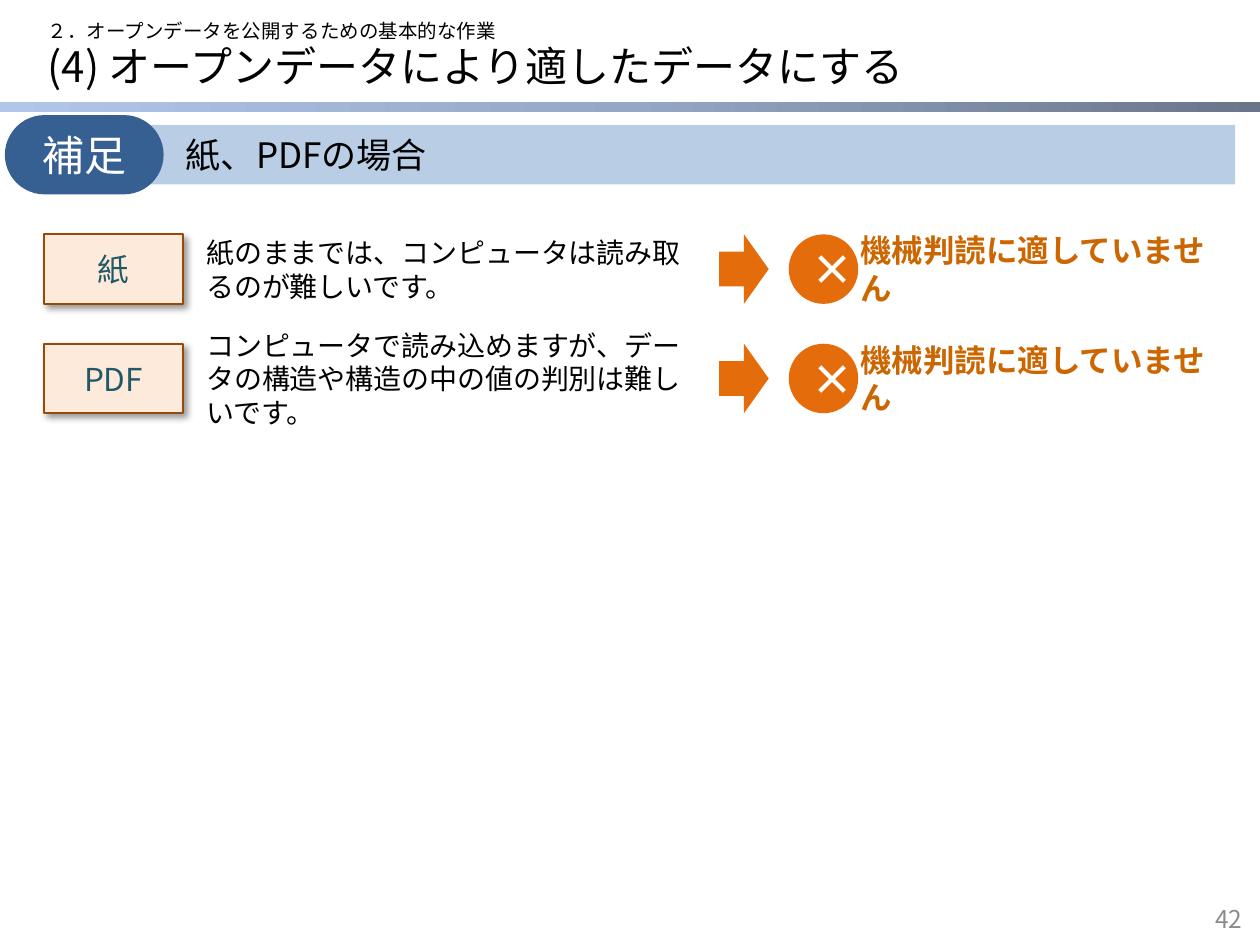
from dataclasses import dataclass

from lxml import etree
from pptx import Presentation
from pptx import util as u
from pptx.dml.color import RGBColor
from pptx.enum import shapes, text
from pptx.oxml import parse_xml
from pptx.oxml.ns import nsdecls, qn

SHAPE = shapes.MSO_SHAPE
ALIGN = text.PP_ALIGN


@dataclass(frozen=True)
class Theme:
    font: str = "Noto Sans CJK JP"
    black: str = "000000"
    white: str = "FFFFFF"
    grey: str = "8C8C8C"
    navy: str = "376092"
    pale_blue: str = "B9CDE5"
    cream: str = "FDEADA"
    brown: str = "984807"
    teal: str = "215968"
    orange: str = "E46C0A"
    amber: str = "CC6600"
    rule: tuple = ((0, "69758B"), (50, "95A7C6"), (100, "B1C6EB"))
    title: float = 24
    heading: float = 20
    label: float = 18
    body: float = 16
    number: float = 14
    section: float = 11.1


class SlideBuilder:
    def __init__(self, slide, theme):
        self.slide = slide
        self.theme = theme

    def set_words(self, box, words, size, color, align=ALIGN.LEFT, bold=False,
                  wrap=True, spacing=None, indent=0):
        frame = box.text_frame
        frame.text = words
        frame.word_wrap = wrap
        frame.vertical_anchor = text.MSO_ANCHOR.MIDDLE
        para = frame.paragraphs[0]
        para.alignment = align
        if spacing:
            para.line_spacing = spacing
        if indent:
            properties = para._p.get_or_add_pPr()
            properties.set("marL", str(u.Pt(indent)))
            properties.set("indent", "0")
        span = para.runs[0]
        span.font.size = u.Pt(size)
        span.font.name = self.theme.font
        span.font.bold = bold
        span.font.color.rgb = RGBColor.from_string(color)
        east_asian = etree.SubElement(span._r.get_or_add_rPr(), qn("a:ea"))
        east_asian.set("typeface", self.theme.font)

    def text(self, area, words, size, color, **style):
        box = self.slide.shapes.add_textbox(*map(u.Pt, area))
        self.set_words(box, words, size, color, **style)

    def shape(self, kind, area, fill, line=None):
        shape = self.slide.shapes.add_shape(kind, *map(u.Pt, area))
        shape.shadow.inherit = False
        shape.fill.solid()
        shape.fill.fore_color.rgb = RGBColor.from_string(fill)
        if line:
            shape.line.color.rgb = RGBColor.from_string(line)
            shape.line.width = u.Pt(1)
        else:
            shape.line.fill.background()
        return shape

    def gradient_rule(self, area):
        bar = self.shape(SHAPE.RECTANGLE, area, self.theme.white)
        stops = "".join(
            f'<a:gs pos="{place * 1000}"><a:srgbClr val="{color}"/></a:gs>'
            for place, color in self.theme.rule)
        gradient = parse_xml(
            f'<a:gradFill {nsdecls("a")} rotWithShape="1"><a:gsLst>{stops}</a:gsLst>'
            '<a:lin ang="10800000" scaled="0"/></a:gradFill>')
        properties = bar._element.spPr
        properties.replace(properties.find(qn("a:solidFill")), gradient)

    def card(self, area, words):
        theme = self.theme
        card = self.shape(SHAPE.RECTANGLE, area, theme.cream, theme.brown)
        self.set_words(card, words, theme.label, theme.teal, align=ALIGN.CENTER, wrap=False)
        card._element.spPr.find(qn("a:effectLst")).append(parse_xml(
            f'<a:outerShdw {nsdecls("a")} blurRad="{u.Pt(4)}" dist="{u.Pt(3)}" '
            'dir="2700000" algn="tl" rotWithShape="0"><a:srgbClr val="000000">'
            '<a:alpha val="40000"/></a:srgbClr></a:outerShdw>'))

    def verdict_row(self, top, height, name, reason, mark, verdict):
        theme = self.theme
        self.card((25.2, top, 79.4, height), name)
        self.text((110.8, top, 289.4, height), reason, theme.body, theme.black)
        self.text((484.6, top, 221, height), verdict, theme.label, theme.amber,
                  bold=True, wrap=False)
        self.shape(SHAPE.RIGHT_ARROW, (411, top, 28.3, height), theme.orange)
        circle = self.shape(SHAPE.OVAL, (450.7, top, height, height), theme.orange)
        self.set_words(circle, mark, theme.title, theme.white, align=ALIGN.CENTER, bold=True)

    def banner(self, tag, heading):
        theme = self.theme
        band = self.shape(SHAPE.RECTANGLE, (14.2, 71.4, 691.7, 34), theme.pale_blue)
        self.set_words(band, heading, theme.heading, theme.black, indent=85)
        pill = self.shape(SHAPE.ROUNDED_RECTANGLE, (2.8, 65.8, 90.7, 45.3), theme.navy)
        pill.adjustments[0] = 0.5
        self.set_words(pill, tag, theme.title, theme.white, align=ALIGN.CENTER, wrap=False)


def main():
    deck = Presentation()
    deck.slide_width, deck.slide_height = u.Pt(720), u.Pt(540)
    theme = Theme()
    page = SlideBuilder(deck.slides.add_slide(deck.slide_layouts[6]), theme)

    page.gradient_rule((0, 58.3, 720, 5.7))
    page.text((20.2, 23, 680.4, 33.1), "(4) オープンデータにより適したデータにする",
              theme.title, theme.black, spacing=0.9)
    page.text((677.5, 514, 39.6, 22.3), "42", theme.number, theme.grey, align=ALIGN.RIGHT)
    page.text((20.2, 9.4, 686.2, 18.7), "２．オープンデータを公開するための基本的な作業",
              theme.section, theme.black, wrap=False, spacing=0.8)

    rows = (
        ("紙", "紙のままでは、コンピュータは読み取るのが難しいです。"),
        ("PDF", "コンピュータで読み込めますが、データの構造や構造の中の値の判別は難しいです。"),
    )
    first_top, pitch, height = 133.9, 62.5, 39.7
    for index, (name, reason) in enumerate(rows):
        page.verdict_row(first_top + index * pitch, height, name, reason,
                         "×", "機械判読に適していません")

    page.banner("補足", "紙、PDFの場合")
    deck.save("out.pptx")


if __name__ == "__main__":
    main()
